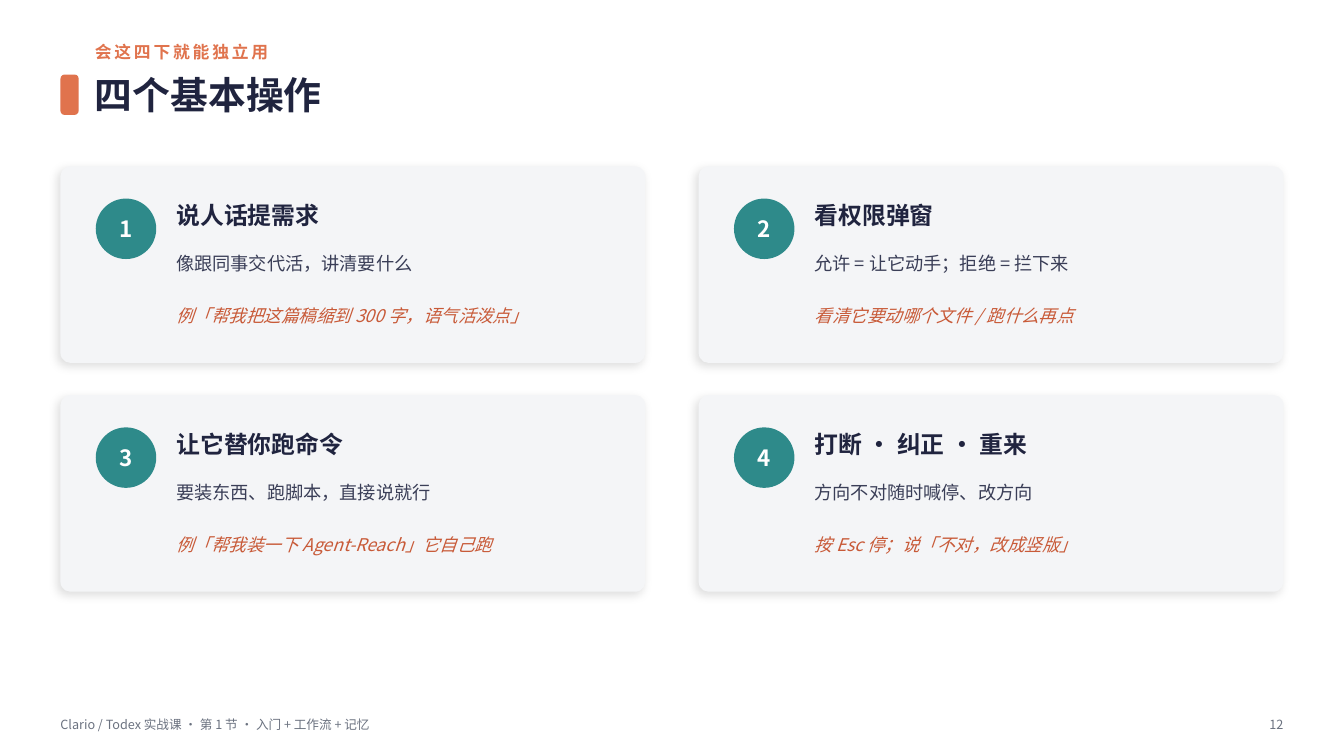
from lxml import etree
from pptx import Presentation
from pptx.dml.color import RGBColor
from pptx.enum.shapes import MSO_SHAPE
from pptx.enum.text import MSO_ANCHOR, MSO_AUTO_SIZE, PP_ALIGN
from pptx.oxml.ns import qn
from pptx.util import Pt

EYEBROW = "会这四下就能独立用"
TITLE = "四个基本操作"
OPERATIONS = [
    ("说人话提需求", "像跟同事交代活，讲清要什么", "例「帮我把这篇稿缩到 300 字，语气活泼点」"),
    ("看权限弹窗", "允许 = 让它动手；拒绝 = 拦下来", "看清它要动哪个文件 / 跑什么再点"),
    ("让它替你跑命令", "要装东西、跑脚本，直接说就行", "例「帮我装一下 Agent-Reach」它自己跑"),
    ("打断 · 纠正 · 重来", "方向不对随时喊停、改方向", "按 Esc 停；说「不对，改成竖版」"),
]
FOOTER = "Clario / Todex 实战课 · 第 1 节 · 入门 + 工作流 + 记忆"
PAGE_NUMBER = "12"

PX = 9144
FONT = "Noto Sans CJK SC"
LEFT, CENTER, RIGHT = PP_ALIGN.LEFT, PP_ALIGN.CENTER, PP_ALIGN.RIGHT
MIDDLE = MSO_ANCHOR.MIDDLE
NO_FIT = MSO_AUTO_SIZE.NONE
ROUNDED, OVAL = MSO_SHAPE.ROUNDED_RECTANGLE, MSO_SHAPE.OVAL

COLORS = {
    "orange": "E0734D", "navy": "20243F", "card": "F4F5F7", "teal": "2E8A8A",
    "white": "FFFFFF", "body": "3A3E57", "rust": "C85A38", "gray": "6B7280",
}
STYLES = {
    "eyebrow": ("orange", {"size": Pt(12), "bold": True, "italic": False}),
    "title": ("navy", {"size": Pt(27), "bold": True, "italic": False}),
    "number": ("white", {"size": Pt(16), "bold": True, "italic": False}),
    "heading": ("navy", {"size": Pt(17), "bold": True, "italic": False}),
    "body": ("body", {"size": Pt(13), "bold": False, "italic": False}),
    "example": ("rust", {"size": Pt(12.5), "bold": False, "italic": True}),
    "footer": ("gray", {"size": Pt(9), "bold": False, "italic": False}),
}

CARD_LEFT, CARD_TOP, CARD_WIDTH, CARD_HEIGHT = 60, 165, 580, 195
COLUMN_STEP, ROW_STEP = 633, 227
CARD_LINES = [("heading", 26, 45), ("body", 76, 40), ("example", 120, 55)]


def color(name):
    return RGBColor.from_string(COLORS[name])


def scaled(*lengths):
    return [length * PX for length in lengths]


def write(shape, text, style, align=LEFT, spacing=None):
    frame = shape.text_frame
    settings = {
        "auto_size": NO_FIT, "word_wrap": True, "vertical_anchor": MIDDLE,
        "margin_left": 0, "margin_right": 0, "margin_top": 0, "margin_bottom": 0,
    }
    for key, value in settings.items():
        setattr(frame, key, value)
    para = frame.paragraphs[0]
    para.alignment = align
    para.line_spacing = spacing
    span = para.add_run()
    span.text = text
    color_name, font_values = STYLES[style]
    span.font.name = FONT
    for key, value in font_values.items():
        setattr(span.font, key, value)
    span.font.color.rgb = color(color_name)
    properties = span.font._element
    etree.SubElement(properties, qn("a:ea")).set("typeface", FONT)
    return properties


def add_text(page, box, text, style, align=LEFT, spacing=None):
    return write(page.shapes.add_textbox(*scaled(*box)), text, style, align, spacing)


def add_filled(page, kind, box, fill, corner=None):
    shape = page.shapes.add_shape(kind, *scaled(*box))
    shape.shadow.inherit = False
    shape.fill.solid()
    shape.fill.fore_color.rgb = color(fill)
    shape.line.fill.background()
    if corner is not None:
        shape.adjustments[0] = corner
    return shape


def add_shadow(shape):
    effects = shape._element.spPr.find(qn("a:effectLst"))
    shadow = etree.SubElement(effects, qn("a:outerShdw"))
    values = {"blurRad": Pt(7), "dist": Pt(3), "dir": 135 * 60000, "algn": "bl", "rotWithShape": 0}
    for key, value in values.items():
        shadow.set(key, str(int(value)) if key != "algn" else value)
    tint = etree.SubElement(shadow, qn("a:srgbClr"))
    tint.set("val", "000000")
    etree.SubElement(tint, qn("a:alpha")).set("val", "12000")


def add_card(page, index, operation):
    row, column = divmod(index, 2)
    left = CARD_LEFT + column * COLUMN_STEP
    top = CARD_TOP + row * ROW_STEP
    card = add_filled(page, ROUNDED, (left, top, CARD_WIDTH, CARD_HEIGHT), "card", 0.05)
    add_shadow(card)
    badge = add_filled(page, OVAL, (left + 35, top + 32, 60, 60), "teal")
    write(badge, str(index + 1), "number", CENTER)
    for text, (style, offset, height) in zip(operation, CARD_LINES):
        spacing = 1.05 if style == "example" else None
        add_text(page, (left + 115, top + offset, 440, height), text, style, spacing=spacing)


def main():
    deck = Presentation()
    deck.slide_width, deck.slide_height = scaled(1333, 750)
    page = deck.slides.add_slide(deck.slide_layouts[5])
    page.background.fill.solid()
    page.background.fill.fore_color.rgb = color("white")

    title = page.shapes.title
    title.left, title.top, title.width, title.height = scaled(94, 64, 1179, 60)
    write(title, TITLE, "title")
    eyebrow = add_text(page, (94, 36, 1179, 30), EYEBROW, "eyebrow")
    eyebrow.set("spc", "200")
    add_filled(page, ROUNDED, (60, 74, 18, 40), "orange", 0.22)

    for index, operation in enumerate(OPERATIONS):
        add_card(page, index, operation)

    add_text(page, (60, 704, 900, 30), FOOTER, "footer")
    add_text(page, (1203, 704, 70, 30), PAGE_NUMBER, "footer", RIGHT)
    deck.save("out.pptx")


if __name__ == "__main__":
    main()
